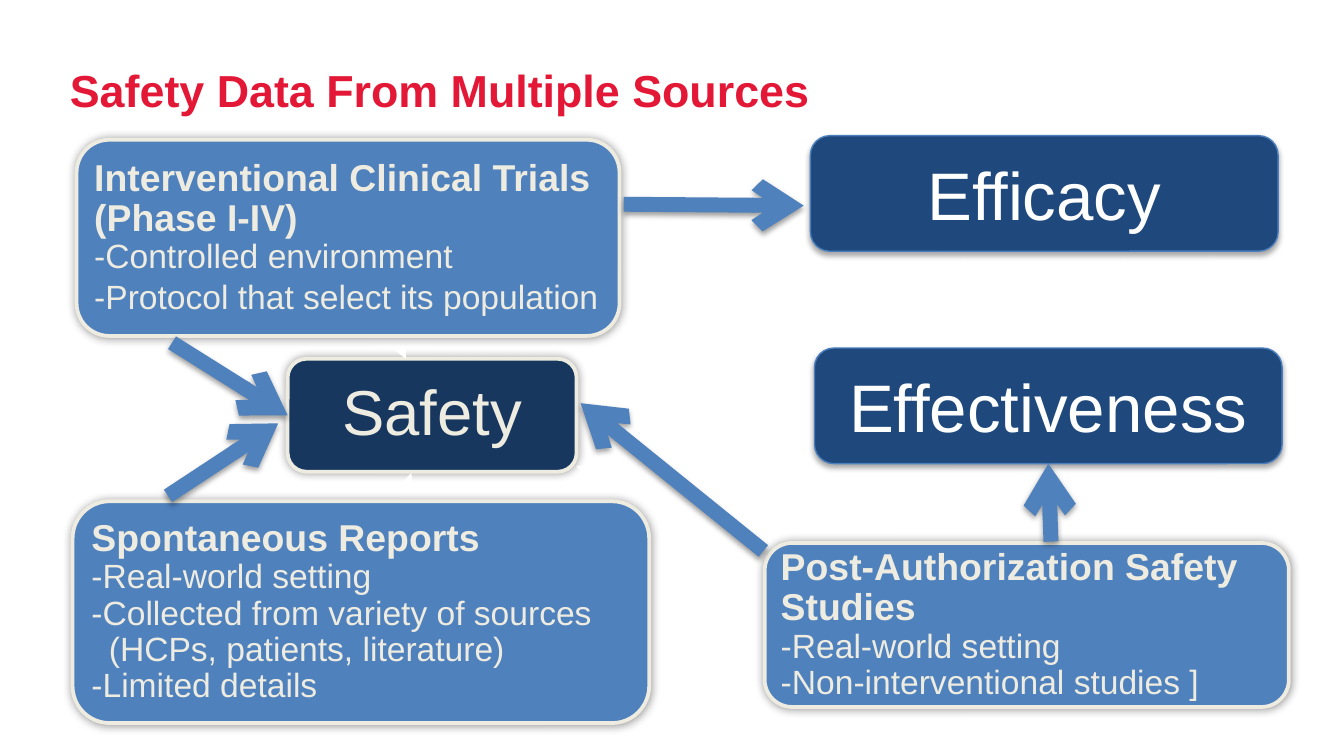
from lxml import etree
from pptx import Presentation
from pptx.dml.color import RGBColor
from pptx.enum.shapes import MSO_CONNECTOR, MSO_SHAPE
from pptx.enum.text import MSO_ANCHOR, MSO_AUTO_SIZE, PP_ALIGN
from pptx.oxml import parse_xml
from pptx.oxml.ns import qn
from pptx.util import Inches, Pt

STRAIGHT = MSO_CONNECTOR.STRAIGHT
ROUNDED = MSO_SHAPE.ROUNDED_RECTANGLE
MIDDLE, TOP = MSO_ANCHOR.MIDDLE, MSO_ANCHOR.TOP
LEFT, CENTER = PP_ALIGN.LEFT, PP_ALIGN.CENTER
NO_FIT = MSO_AUTO_SIZE.NONE
LEFT_SIDE, BOTTOM_SIDE = 1, 2

THEME = {
    "font": "Arial",
    "title": RGBColor(0xE3, 0x18, 0x37),
    "source": RGBColor(0x4F, 0x81, 0xBD),
    "safety": RGBColor(0x17, 0x37, 0x5E),
    "outcome": RGBColor(0x1F, 0x49, 0x7D),
    "outcome_edge": RGBColor(0x4B, 0x7E, 0xBC),
    "cream": RGBColor(0xEE, 0xEC, 0xE1),
    "white": RGBColor(0xFF, 0xFF, 0xFF),
    "title_size": 24, "heading_size": 20, "detail_size": 18,
    "safety_size": 34, "outcome_size": 36,
}
# Shadows: opacity %, blur pt, distance pt, direction in degrees
GLOW = (40, 5, 0, 0)
BOX_DROP = (35, 3.1, 1.8, 90)
ARROW_DROP = (38, 3.1, 1.6, 90)
DRAWING_NS = 'xmlns:a="http://schemas.openxmlformats.org/drawingml/2006/main"'


def set_shadow(properties, shadow=None):
    """Replace the inherited shadow by the given one, or by none."""
    effects = properties.find(qn("a:effectLst"))
    if effects is None:
        effects = etree.SubElement(properties, qn("a:effectLst"))
    if shadow:
        opacity, blur, distance, direction = shadow
        effects.append(parse_xml(
            f'<a:outerShdw {DRAWING_NS} blurRad="{Pt(blur)}" dist="{Pt(distance)}" '
            f'dir="{direction * 60000}" rotWithShape="0"><a:srgbClr val="000000">'
            f'<a:alpha val="{opacity * 1000}"/></a:srgbClr></a:outerShdw>'))


def add_line(page, points, color, width, end_tag, end_type, shadow=None):
    """Draw a straight line with an arrowhead at one end."""
    line = page.shapes.add_connector(STRAIGHT, *[Inches(v) for v in points])
    line.line.color.rgb = color
    line.line.width = Pt(width)
    properties = line._element.spPr
    etree.SubElement(properties.find(qn("a:ln")), qn(end_tag), type=end_type)
    set_shadow(properties, shadow)
    return line


# Widescreen 16:9 page
deck = Presentation()
deck.slide_width = Inches(10)
deck.slide_height = Inches(10 * 9 / 16)
page = deck.slides.add_slide(deck.slide_layouts[5])

# Title
title = page.shapes.title
title.left, title.top = Inches(0.52), Inches(0.47)
title.width, title.height = Inches(8.98), Inches(3.13)
frame = title.text_frame
frame.text = "Safety Data From Multiple Sources"
frame.auto_size = NO_FIT
frame.vertical_anchor = TOP
frame.margin_left = frame.margin_right = frame.margin_top = frame.margin_bottom = 0
para = frame.paragraphs[0]
para.alignment = LEFT
para.font.name, para.font.size = THEME["font"], Pt(THEME["title_size"])
para.font.bold, para.font.color.rgb = True, THEME["title"]

# Box styles: fill, edge, edge width, shadow, text colour, first size, alignment, inset
SOURCE = (THEME["source"], THEME["cream"], 2, GLOW, THEME["cream"],
          THEME["heading_size"], LEFT, 0.06)
SAFETY = (THEME["safety"], THEME["cream"], 2, GLOW, THEME["cream"],
          THEME["safety_size"], CENTER, 0.09)
OUTCOME = (THEME["outcome"], THEME["outcome_edge"], 0.75, BOX_DROP, THEME["white"],
           THEME["outcome_size"], CENTER, 0.1)

# Boxes: place, style, white spoke behind the box, lines of (text, spacing, hanging indent)
boxes = [
    ((2.14, 2.67, 2.15, 0.84), SAFETY, None, [("Safety", 0.9, 0)]),
    ((0.57, 1.04, 4.04, 1.46), SOURCE, (3.02, 2.67, 2.94, 2.5), [
        ("Interventional Clinical Trials (Phase I-IV)", 0.9, 0),
        ("-Controlled environment", 0.9, 0),
        ("-Protocol that select its population", 1.0, 0.06)]),
    ((0.54, 3.73, 4.29, 1.65), SOURCE, (3.06, 3.52, 2.99, 3.73), [
        ("Spontaneous Reports", 0.9, 0),
        ("-Real-world setting", 0.9, 0),
        ("-Collected from variety of sources (HCPs, patients, literature)", 0.9, 0.13),
        ("-Limited details", 0.9, 0)]),
    ((5.69, 4.04, 3.9, 1.22), SOURCE, (4.29, 3.47, 5.91, 4.04), [
        ("Post-Authorization Safety Studies", 0.9, 0),
        ("-Real-world setting", 0.9, 0),
        ("-Non-interventional studies ]", 0.9, 0)]),
    ((6.03, 1.01, 3.48, 0.86), OUTCOME, None, [("Efficacy", 1.0, 0)]),
    ((6.06, 2.59, 3.48, 0.86), OUTCOME, None, [("Effectiveness", 1.0, 0)]),
]
drawn = {}
for place, style, spoke, lines in boxes:
    fill, edge, edge_width, shadow, ink, first_size, alignment, inset = style
    if spoke:
        add_line(page, spoke, THEME["white"], 5, "a:headEnd", "triangle")
    box = page.shapes.add_shape(ROUNDED, *[Inches(v) for v in place])
    drawn[lines[0][0]] = box
    box.fill.solid()
    box.fill.fore_color.rgb = fill
    box.line.color.rgb = edge
    box.line.width = Pt(edge_width)
    box.shadow.inherit = False
    set_shadow(box._element.spPr, shadow)
    frame = box.text_frame
    frame.word_wrap = True
    frame.vertical_anchor = MIDDLE
    frame.margin_left = frame.margin_right = Inches(inset)
    frame.margin_top = frame.margin_bottom = Inches(min(inset, 0.09))
    for index, (text, spacing, hanging) in enumerate(lines):
        para = frame.add_paragraph() if index else frame.paragraphs[0]
        para.text = text
        para.alignment = alignment
        para.line_spacing = spacing
        para.font.name = THEME["font"]
        para.font.size = Pt(THEME["detail_size"] if index else first_size)
        para.font.bold = style is SOURCE and index == 0
        para.font.color.rgb = ink
        if hanging:
            indents = para._p.get_or_add_pPr()
            indents.set("marL", str(Inches(hanging)))
            indents.set("indent", str(-Inches(hanging)))

# Arrows: end points, and the box side joined at the tip
arrows = [
    ((4.64, 1.52, 5.98, 1.53), None, None),
    ((7.82, 4.03, 7.78, 3.42), "Effectiveness", BOTTOM_SIDE),
    ((5.68, 4.1, 4.32, 3.0), None, None),
    ((1.28, 2.55, 2.13, 3.11), "Safety", LEFT_SIDE),
    ((1.25, 3.69, 2.07, 3.15), None, None),
]
for points, target, side in arrows:
    arrow = add_line(page, points, THEME["source"], 8, "a:tailEnd", "arrow", ARROW_DROP)
    if target:
        arrow.end_connect(drawn[target], side)

deck.save("out.pptx")
